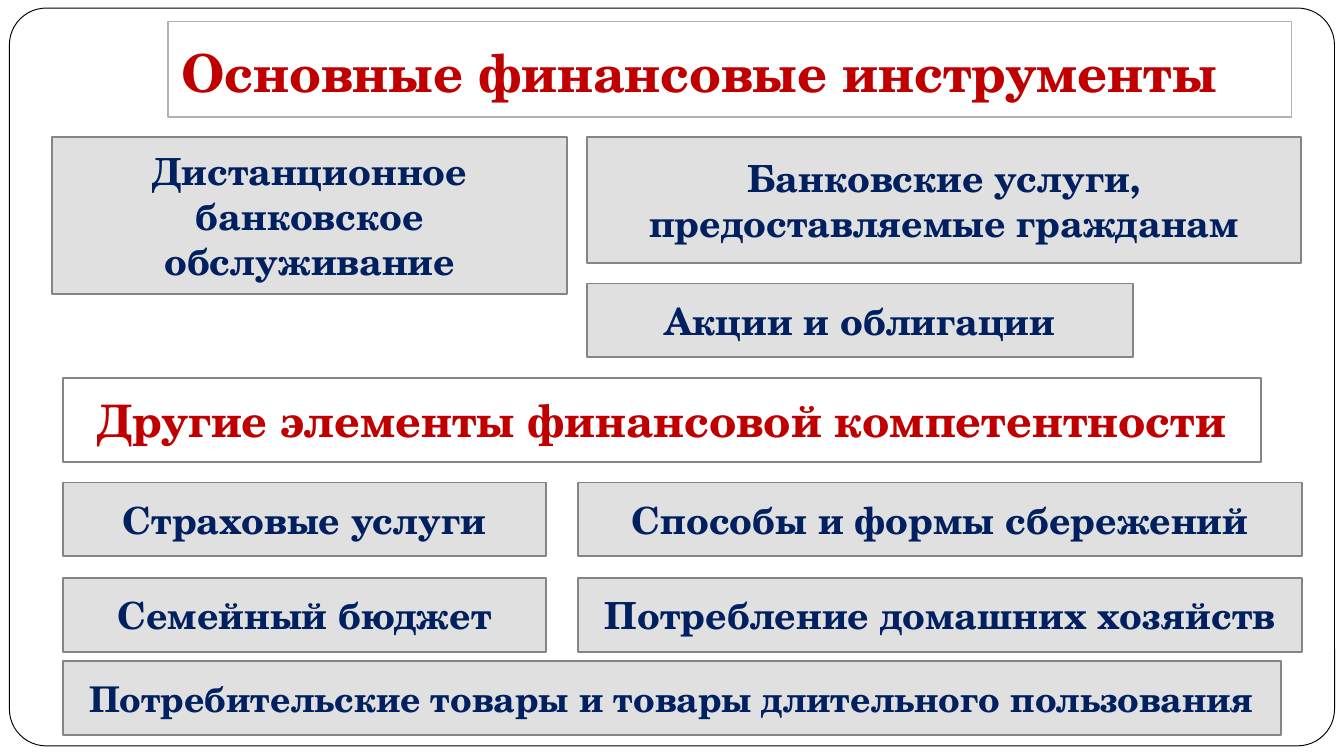
from pptx import Presentation
from pptx.dml.color import RGBColor
from pptx.enum import shapes, text
from pptx.util import Inches, Pt

FONT = "TeX Gyre Schola"
WHITE = RGBColor(0xFF, 0xFF, 0xFF)
BLACK = RGBColor(0, 0, 0)
PALE = RGBColor(0xE0, 0xE0, 0xE0)
GRAY = RGBColor(0x85, 0x85, 0x85)
SILVER = RGBColor(0xB2, 0xB2, 0xB2)
RED = RGBColor(0xC0, 0, 0)
NAVY = RGBColor(0, 0x20, 0x60)

WIDE = Inches(10)
HIGH = WIDE * 9 // 16
LEFT, RIGHT = 0.47, 4.3
LOW = 0.55
ROWS = [
    (3.59, "Страховые услуги", "Способы и формы сбережений"),
    (4.3, "Семейный бюджет", "Потребление домашних хозяйств"),
]
TOOLS = [
    ((4.37, 2.11, 4.06, LOW), "Акции и облигации"),
    ((4.37, 1.02, 5.31, 0.94), "Банковские услуги, предоставляемые гражданам"),
    ((0.39, 1.02, 3.83, 1.17), "Дистанционное банковское обслуживание"),
]


def add_box(slide, area, fill, line, width=1, kind=shapes.MSO_SHAPE.RECTANGLE):
    box = slide.shapes.add_shape(kind, *map(Inches, area))
    box.shadow.inherit = False
    box.fill.solid()
    box.fill.fore_color.rgb = fill
    box.line.color.rgb = line
    box.line.width = Pt(width)
    return box


def set_text(box, words, size, color, align=text.PP_ALIGN.CENTER):
    frame = box.text_frame
    frame.word_wrap = True
    frame.vertical_anchor = text.MSO_ANCHOR.MIDDLE
    frame.text = words
    para = frame.paragraphs[0]
    para.alignment = align
    font = para.runs[0].font
    font.name = FONT
    font.size = Pt(size)
    font.bold = True
    font.color.rgb = color


def add_frame(slide):
    area = (0.07, 0.06, 9.86, 5.49)
    frame = add_box(slide, area, WHITE, BLACK, 0.5,
                    shapes.MSO_SHAPE.ROUNDED_RECTANGLE)
    frame.adjustments[0] = 0.05


def add_title(slide):
    box = add_box(slide, (1.25, 0.16, 8.36, 0.71), WHITE, SILVER)
    set_text(box, "Основные финансовые инструменты", 28, RED,
             text.PP_ALIGN.LEFT)
    box.text_frame.vertical_anchor = text.MSO_ANCHOR.BOTTOM
    box.text_frame.margin_bottom = Inches(0.1)


def add_header(slide):
    box = add_box(slide, (LEFT, 2.81, 8.91, 0.63), WHITE, GRAY)
    set_text(box, "Другие элементы финансовой компетентности", 24, RED)


def add_card(slide, area, words, size=20):
    set_text(add_box(slide, area, PALE, GRAY), words, size, NAVY)


def main():
    deck = Presentation()
    deck.slide_width, deck.slide_height = WIDE, HIGH
    slide = deck.slides.add_slide(deck.slide_layouts[6])
    add_frame(slide)
    add_title(slide)
    for area, words in TOOLS:
        add_card(slide, area, words)
    add_header(slide)
    for top, first, second in ROWS:
        add_card(slide, (LEFT, top, 3.59, LOW), first)
        add_card(slide, (RIGHT, top, 5.39, LOW), second)
    add_card(slide, (LEFT, 4.92, 9.06, LOW),
             "Потребительские товары и товары длительного пользования", 19)
    deck.save("out.pptx")


if __name__ == "__main__":
    main()
